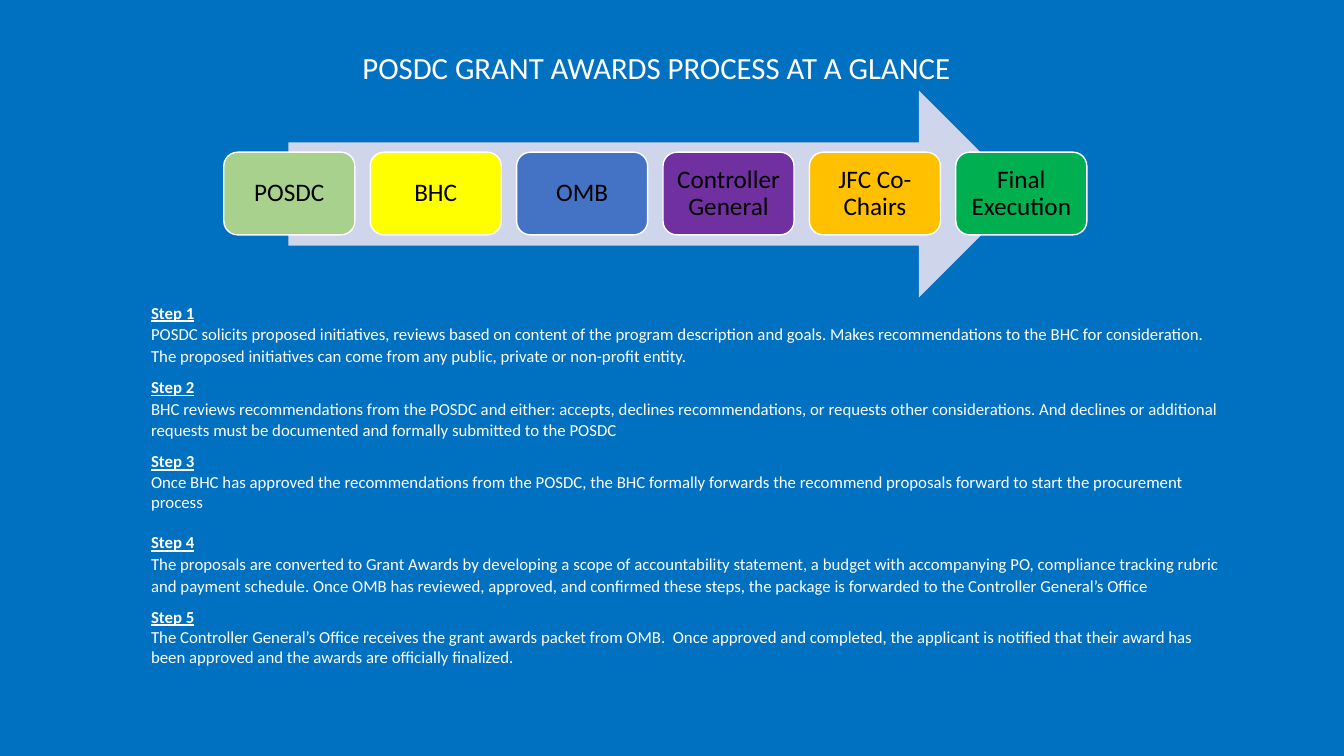
import pptx
import pptx.util
import pptx.dml.color
import pptx.enum.shapes
import pptx.enum.text

Inches = pptx.util.Inches
Pt = pptx.util.Pt
SHAPES = pptx.enum.shapes.MSO_SHAPE
CENTER = pptx.enum.text.PP_ALIGN.CENTER
LEFT = pptx.enum.text.PP_ALIGN.LEFT
MIDDLE = pptx.enum.text.MSO_ANCHOR.MIDDLE

STAGES = [
    ("POSDC", "A9D18E"),
    ("BHC", "FFFF00"),
    ("OMB", "4472C4"),
    ("Controller General", "7030A0"),
    ("JFC Co-Chairs", "FFC000"),
    ("Final Execution", "00B050"),
]

# Each step: text, line spacing, space after
STEPS = [
    ("POSDC solicits proposed initiatives, reviews based on content of the program "
     "description and goals. Makes recommendations to the BHC for consideration. The "
     "proposed initiatives can come from any public, private or non-profit entity.", 1.07, 8),
    ("BHC reviews recommendations from the POSDC and either: accepts, declines "
     "recommendations, or requests other considerations. And declines or additional "
     "requests must be documented and formally submitted to the POSDC", 1.07, 8),
    ("Once BHC has approved the recommendations from the POSDC, the BHC formally forwards "
     "the recommend proposals forward to start the procurement process", 1, 14.65),
    ("The proposals are converted to Grant Awards by developing a scope of accountability "
     "statement, a budget with accompanying PO, compliance tracking rubric and payment "
     "schedule. Once OMB has reviewed, approved, and confirmed these steps, the package is "
     "forwarded to the Controller General’s Office", 1.07, 8),
    ("The Controller General’s Office receives the grant awards packet from OMB.  Once "
     "approved and completed, the applicant is notified that their award has been approved "
     "and the awards are officially finalized.", 1, 0),
]


def rgb(color):
    """Turn a hex string into a colour."""
    return pptx.dml.color.RGBColor.from_string(color)


def write(p, text, size=12, color="FFFFFF", bold=False, underline=False,
          align=LEFT, spacing=1.0, after=0):
    """Fill a paragraph with one formatted run."""
    p.alignment = align
    p.line_spacing = float(spacing)
    p.space_after = Pt(after)
    r = p.add_run()
    r.text = text
    r.font.name = "Calibri"
    r.font.size = Pt(size)
    r.font.color.rgb = rgb(color)
    r.font.bold = bold
    r.font.underline = underline


def add_shape(s, kind, left, top, width, height, fill, line=None):
    """Add a flat preset shape with an optional outline."""
    sp = s.shapes.add_shape(kind, Inches(left), Inches(top), Inches(width), Inches(height))
    sp.shadow.inherit = False
    sp.fill.solid()
    sp.fill.fore_color.rgb = rgb(fill)
    if line:
        sp.line.color.rgb = rgb(line)
        sp.line.width = Pt(1)
    else:
        sp.line.fill.background()
    return sp


def add_stage(s, left, label, fill):
    """Add one labelled box of the process."""
    sp = add_shape(s, SHAPES.ROUNDED_RECTANGLE, left, 1.51, 1.3, 0.82, fill, "FFFFFF")
    tf = sp.text_frame
    tf.word_wrap = True
    tf.vertical_anchor = MIDDLE
    tf.margin_left = tf.margin_right = tf.margin_top = tf.margin_bottom = Inches(0.07)
    write(tf.paragraphs[0], label, size=18, color="000000", align=CENTER, spacing=0.9)


def add_text_frame(s, left, top, width, height):
    """Add a wrapping text box and return its text frame."""
    sp = s.shapes.add_textbox(Inches(left), Inches(top), Inches(width), Inches(height))
    tf = sp.text_frame
    tf.word_wrap = True
    return tf


def add_steps(s):
    """Add the numbered step descriptions."""
    tf = add_text_frame(s, 1.4, 2.95, 10.86, 3.96)
    for i, (text, spacing, after) in enumerate(STEPS, 1):
        p = tf.paragraphs[0] if i == 1 else tf.add_paragraph()
        write(p, f"Step {i}", bold=True, underline=True)
        write(tf.add_paragraph(), text, spacing=spacing, after=after)


def main():
    """Build and save the slide."""
    prs = pptx.Presentation()
    prs.slide_width, prs.slide_height = Inches(13.33), Inches(7.5)
    s = prs.slides.add_slide(prs.slide_layouts[6])
    s.background.fill.solid()
    s.background.fill.fore_color.rgb = rgb("0070C0")

    add_shape(s, SHAPES.RIGHT_ARROW, 2.86, 0.9, 7.28, 2.05, "CFD5EA")
    for i, (label, fill) in enumerate(STAGES):
        add_stage(s, 2.22 + 1.452 * i, label, fill)

    tf = add_text_frame(s, 1.4, 0.43, 10.22, 0.47)
    tf.vertical_anchor = MIDDLE
    write(tf.paragraphs[0], "POSDC GRANT AWARDS PROCESS AT A GLANCE", size=22, align=CENTER)
    add_steps(s)
    prs.save("out.pptx")


if __name__ == "__main__":
    main()
